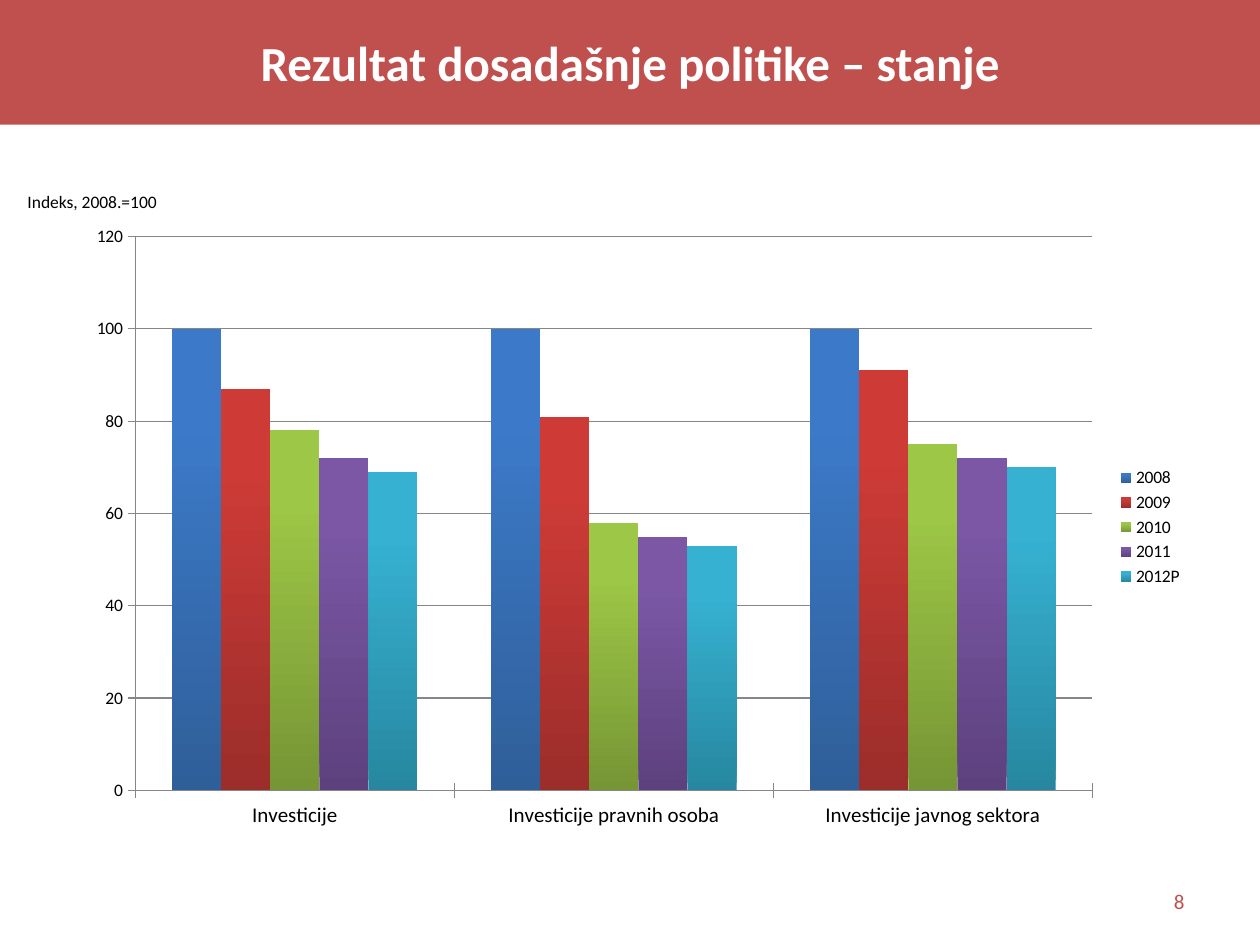
"""Build the slide on investment indices, 2008 to 2012, as a clustered column chart."""
from pptx import Presentation
from pptx.chart.data import CategoryChartData
from pptx.dml.color import RGBColor
from pptx.enum.chart import XL_CHART_TYPE, XL_LEGEND_POSITION, XL_TICK_MARK
from pptx.enum.text import MSO_ANCHOR, MSO_AUTO_SIZE, PP_ALIGN
from pptx.util import Inches, Pt

COLUMNS = XL_CHART_TYPE.COLUMN_CLUSTERED
LEGEND_RIGHT = XL_LEGEND_POSITION.RIGHT
TICK_CROSS = XL_TICK_MARK.CROSS
TOP, MIDDLE = MSO_ANCHOR.TOP, MSO_ANCHOR.MIDDLE
LEFT, CENTER, RIGHT = PP_ALIGN.LEFT, PP_ALIGN.CENTER, PP_ALIGN.RIGHT
NO_FIT = MSO_AUTO_SIZE.NONE
FONT, ACCENT, GRID, BLACK, WHITE = "Calibri", "C0504D", "868686", "000000", "FFFFFF"


def color(hex_string):
    return RGBColor.from_string(hex_string)


def write(holder, text, align, anchor, font_format):
    frame = holder.text_frame
    for name, value in dict(text=text, word_wrap=True, auto_size=NO_FIT,
                            vertical_anchor=anchor).items():
        setattr(frame, name, value)
    paragraph = frame.paragraphs[0]
    paragraph.alignment = align
    font = paragraph.runs[0].font
    font.color.rgb = color(font_format["color"])
    for name in ("size", "bold"):
        setattr(font, name, font_format[name])
    font.name = FONT


prs = Presentation()
prs.slide_width, prs.slide_height = Inches(10), Inches(7.5)
slide = prs.slides.add_slide(prs.slide_layouts[5])

heading = slide.shapes.title
for name, value in dict(left=0, top=0, width=prs.slide_width, height=Inches(0.99)).items():
    setattr(heading, name, value)
heading.fill.solid()
heading.fill.fore_color.rgb = color(ACCENT)
write(heading, "Rezultat dosadašnje politike – stanje", CENTER, MIDDLE,
      dict(size=Pt(28), bold=True, color=WHITE))

indices = CategoryChartData(number_format="General")
indices.categories = ["Investicije", "Investicije pravnih osoba", "Investicije javnog sektora"]
years = [
    ("2008", (100, 100, 100), "2F5F99", "3C7AC9"),
    ("2009", (87, 81, 91), "9B2D2A", "CE3B37"),
    ("2010", (78, 58, 75), "769535", "9DC746"),
    ("2011", (72, 55, 72), "5D417E", "7B57A5"),
    ("2012P", (69, 53, 70), "2787A0", "36B1D2"),
]
for year, values, _, _ in years:
    indices.add_series(year, values)

chart = slide.shapes.add_chart(COLUMNS, Inches(0.59), Inches(1.7), Inches(8.9), Inches(4.97),
                               indices).chart
chart.has_title = False
chart.has_legend = True
chart.legend.position = LEGEND_RIGHT
chart.legend.include_in_layout = False
for name, value in dict(name=FONT, size=Pt(10)).items():
    setattr(chart.font, name, value)
chart.font.color.rgb = color(BLACK)

columns = chart.plots[0]
for name, value in dict(gap_width=150, overlap=0, vary_by_categories=False).items():
    setattr(columns, name, value)
for series, (_, _, base, crown) in zip(columns.series, years):
    fill = series.format.fill
    fill.gradient()
    fill.gradient_angle = 90
    for stop, tone, position in zip(fill.gradient_stops, (base, crown), (0, 0.8)):
        stop.color.rgb = color(tone)
        stop.position = position

groups, scale = chart.category_axis, chart.value_axis
groups.tick_labels.font.size = Pt(12)
for name, value in dict(minimum_scale=0, maximum_scale=120, major_unit=20,
                        has_major_gridlines=True).items():
    setattr(scale, name, value)
for axis in (groups, scale):
    axis.major_tick_mark = TICK_CROSS
for rule in (groups, scale, scale.major_gridlines):
    rule.format.line.color.rgb = color(GRID)
    rule.format.line.width = Pt(0.75)

labels = [
    ("8", (7.17, 6.95, 2.33, 0.4), RIGHT, MIDDLE, 12, ACCENT),
    ("Indeks, 2008.=100", (0.12, 1.47, 2.44, 0.27), LEFT, TOP, 10, BLACK),
]
for text, place, align, anchor, size, tone in labels:
    write(slide.shapes.add_textbox(*map(Inches, place)), text, align, anchor,
          dict(size=Pt(size), bold=False, color=tone))

prs.save("out.pptx")
